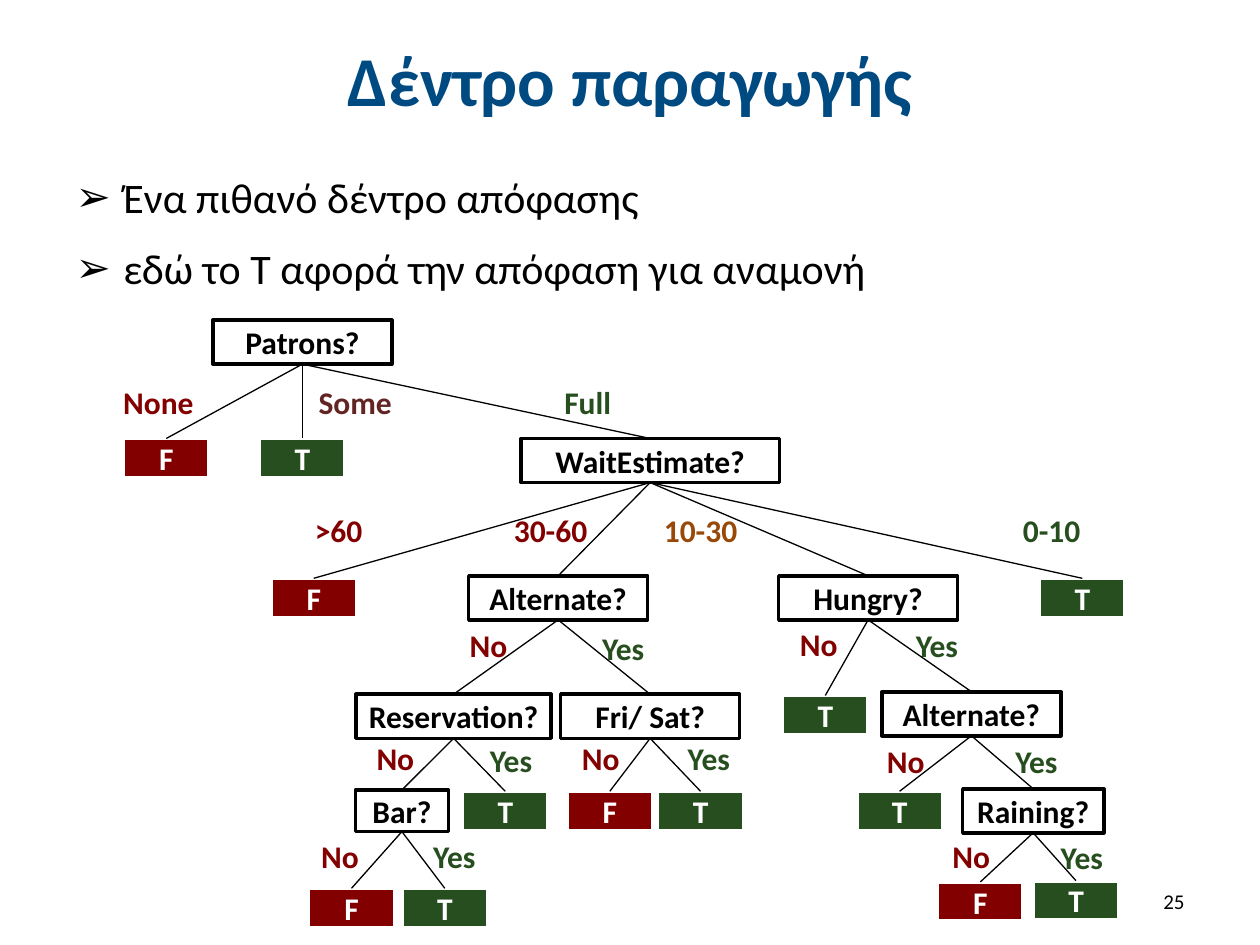
import pptx
import pptx.util
import pptx.dml.color
import pptx.enum.shapes
import pptx.enum.text
import pptx.oxml
import pptx.oxml.ns
from pptx.util import Inches

THEME = {
    "font": "Calibri",
    "title_size": 40, "body_size": 24, "tree_size": 18, "number_size": 12,
    "title": "004A82", "black": "000000", "white": "FFFFFF",
    "no": "820000", "yes": "274E1E", "some": "632523", "medium": "984807",
    "box_line": 2, "branch_line": 0.75,
}

TITLE = "Δέντρο παραγωγής"
BULLETS = ["Ένα πιθανό δέντρο απόφασης", "εδώ το Τ αφορά την απόφαση για αναμονή"]
SLIDE_NUMBER = "25"

# key: (question, centre x, top, width, height)
QUESTIONS = {
    "patrons": ("Patrons?", 2.4, 2.54, 1.42, 0.35),
    "wait": ("WaitEstimate?", 5.16, 3.48, 2.05, 0.35),
    "alternate": ("Alternate?", 4.43, 4.57, 1.42, 0.35),
    "hungry": ("Hungry?", 6.89, 4.57, 1.42, 0.35),
    "reservation": ("Reservation?", 3.6, 5.51, 1.55, 0.35),
    "weekend": ("Fri/ Sat?", 5.16, 5.51, 1.42, 0.35),
    "hungry_alternate": ("Alternate?", 7.71, 5.49, 1.42, 0.35),
    "raining": ("Raining?", 8.2, 6.26, 1.12, 0.35),
    "bar": ("Bar?", 3.19, 6.27, 0.74, 0.33),
}

# key: (decision, centre x, top)
LEAVES = {
    "none_f": ("F", 1.32, 3.48), "some_t": ("T", 2.4, 3.48),
    "long_f": ("F", 2.49, 4.59), "short_t": ("T", 8.59, 4.59),
    "hungry_t": ("T", 6.55, 5.52),
    "reserved_t": ("T", 4.01, 6.28),
    "weekday_f": ("F", 4.84, 6.28), "weekend_t": ("T", 5.56, 6.28),
    "no_alternate_t": ("T", 7.14, 6.28),
    "no_bar_f": ("F", 2.79, 7.05), "bar_t": ("T", 3.53, 7.05),
    "dry_f": ("F", 7.78, 7.0), "rain_t": ("T", 8.54, 6.99),
}
LEAF_SIZE = (0.68, 0.31)
LEAF_COLOURS = {"F": "no", "T": "yes"}

# (parent, child, answer, answer left, answer top)
BRANCHES = [
    ("patrons", "none_f", "None", 0.88, 2.99),
    ("patrons", "some_t", "Some", 2.43, 2.99),
    ("patrons", "wait", "Full", 4.38, 2.99),
    ("wait", "long_f", ">60", 2.4, 4.01),
    ("wait", "alternate", "30-60", 3.98, 4.01),
    ("wait", "hungry", "10-30", 5.17, 4.01),
    ("wait", "short_t", "0-10", 8.02, 4.01),
    ("alternate", "reservation", "No", 3.63, 4.92),
    ("alternate", "weekend", "Yes", 4.68, 4.94),
    ("hungry", "hungry_t", "No", 6.25, 4.91),
    ("hungry", "hungry_alternate", "Yes", 7.17, 4.92),
    ("reservation", "bar", "No", 2.89, 5.82),
    ("reservation", "reserved_t", "Yes", 3.79, 5.83),
    ("weekend", "weekday_f", "No", 4.52, 5.82),
    ("weekend", "weekend_t", "Yes", 5.36, 5.82),
    ("hungry_alternate", "no_alternate_t", "No", 6.94, 5.84),
    ("hungry_alternate", "raining", "Yes", 7.96, 5.84),
    ("bar", "no_bar_f", "No", 2.45, 6.59),
    ("bar", "bar_t", "Yes", 3.34, 6.59),
    ("raining", "dry_f", "No", 7.46, 6.59),
    ("raining", "rain_t", "Yes", 8.32, 6.6),
]
# answer: (width, colour)
ANSWERS = {
    "None": (0.76, "no"), "Some": (0.79, "some"), "Full": (0.58, "yes"),
    ">60": (0.58, "no"), "30-60": (0.79, "no"), "10-30": (0.79, "medium"),
    "0-10": (0.66, "yes"), "No": (0.5, "no"), "Yes": (0.54, "yes"),
}
ANSWER_HEIGHT = 0.4
BOTTOM_SITE, TOP_SITE = 2, 0

ALIGN = pptx.enum.text.PP_ALIGN
ANCHOR = pptx.enum.text.MSO_ANCHOR


def rgb(colour):
    return pptx.dml.color.RGBColor.from_string(THEME[colour])


def write(paragraph, text, size, colour, bold=True, align=ALIGN.LEFT):
    paragraph.alignment = align
    run = paragraph.add_run()
    run.text = text
    formats = {"name": THEME["font"], "size": pptx.util.Pt(THEME[size]), "bold": bold}
    for attribute, value in formats.items():
        setattr(run.font, attribute, value)
    run.font.color.rgb = rgb(colour)


def set_frame(frame, wrap, anchor):
    formats = {"auto_size": pptx.enum.text.MSO_AUTO_SIZE.NONE,
               "word_wrap": wrap, "vertical_anchor": anchor}
    for attribute, value in formats.items():
        setattr(frame, attribute, value)


def place(shape, *box):
    for attribute, value in zip(("left", "top", "width", "height"), box):
        setattr(shape, attribute, Inches(value))


def add_bullet(paragraph):
    properties = paragraph._p.get_or_add_pPr()
    properties.set("marL", str(Inches(0.38)))
    properties.set("indent", str(Inches(-0.38)))
    namespace = pptx.oxml.ns.nsdecls("a")
    for xml in (f'<a:buFont {namespace} typeface="Arial"/>',
                f'<a:buChar {namespace} char="➢"/>'):
        properties.append(pptx.oxml.parse_xml(xml))


def add_node(slide, text, centre, top, width, height, fill, ink):
    node = slide.shapes.add_shape(
        pptx.enum.shapes.MSO_SHAPE.RECTANGLE, Inches(centre - width / 2),
        Inches(top), Inches(width), Inches(height))
    node.shadow.inherit = False
    node.fill.solid()
    node.fill.fore_color.rgb = rgb(fill)
    node.line.color.rgb = rgb(ink)
    node.line.width = pptx.util.Pt(THEME["box_line"])
    set_frame(node.text_frame, False, ANCHOR.MIDDLE)
    write(node.text_frame.paragraphs[0], text, "tree_size", ink, align=ALIGN.CENTER)
    return node


def add_branch(slide, parent, child):
    branch = slide.shapes.add_connector(
        pptx.enum.shapes.MSO_CONNECTOR.STRAIGHT, 0, 0, 0, 0)
    branch.begin_connect(parent, BOTTOM_SITE)
    branch.end_connect(child, TOP_SITE)
    branch.line.color.rgb = rgb("black")
    branch.line.width = pptx.util.Pt(THEME["branch_line"])
    branch._element.spPr.append(
        pptx.oxml.parse_xml(f'<a:effectLst {pptx.oxml.ns.nsdecls("a")}/>'))


def add_text(slide, box, text, size, colour, wrap=False, anchor=ANCHOR.TOP, **style):
    label = slide.shapes.add_textbox(*map(Inches, box))
    set_frame(label.text_frame, wrap, anchor)
    write(label.text_frame.paragraphs[0], text, size, colour, **style)


def add_heading(slide):
    title, body = slide.placeholders
    place(title, 0, 0.13, 10, 0.99)
    set_frame(title.text_frame, True, ANCHOR.MIDDLE)
    write(title.text_frame.paragraphs[0], TITLE, "title_size", "title", align=ALIGN.CENTER)
    place(body, 0.5, 1.31, 9, 1.18)
    set_frame(body.text_frame, True, ANCHOR.TOP)
    for index, bullet in enumerate(BULLETS):
        paragraph = body.text_frame.add_paragraph() if index else body.text_frame.paragraphs[0]
        add_bullet(paragraph)
        paragraph.space_before = pptx.util.Pt(12 if index else 0)
        write(paragraph, bullet, "body_size", "black", bold=False)


def add_tree(slide):
    nodes = {key: add_node(slide, *question, "white", "black")
             for key, question in QUESTIONS.items()}
    for key, leaf in LEAVES.items():
        nodes[key] = add_node(slide, *leaf, *LEAF_SIZE, LEAF_COLOURS[leaf[0]], "white")
    for parent, child, answer, left, top in BRANCHES:
        add_branch(slide, nodes[parent], nodes[child])
        width, colour = ANSWERS[answer]
        add_text(slide, (left, top, width, ANSWER_HEIGHT), answer, "tree_size", colour)


def main():
    deck = pptx.Presentation()
    deck.slide_width, deck.slide_height = Inches(10), Inches(7.5)
    slide = deck.slides.add_slide(deck.slide_layouts[1])
    add_heading(slide)
    add_text(slide, (8.93, 6.95, 0.57, 0.4), SLIDE_NUMBER, "number_size", "black",
             wrap=True, anchor=ANCHOR.MIDDLE, bold=False, align=ALIGN.RIGHT)
    add_tree(slide)
    deck.save("out.pptx")


if __name__ == "__main__":
    main()
